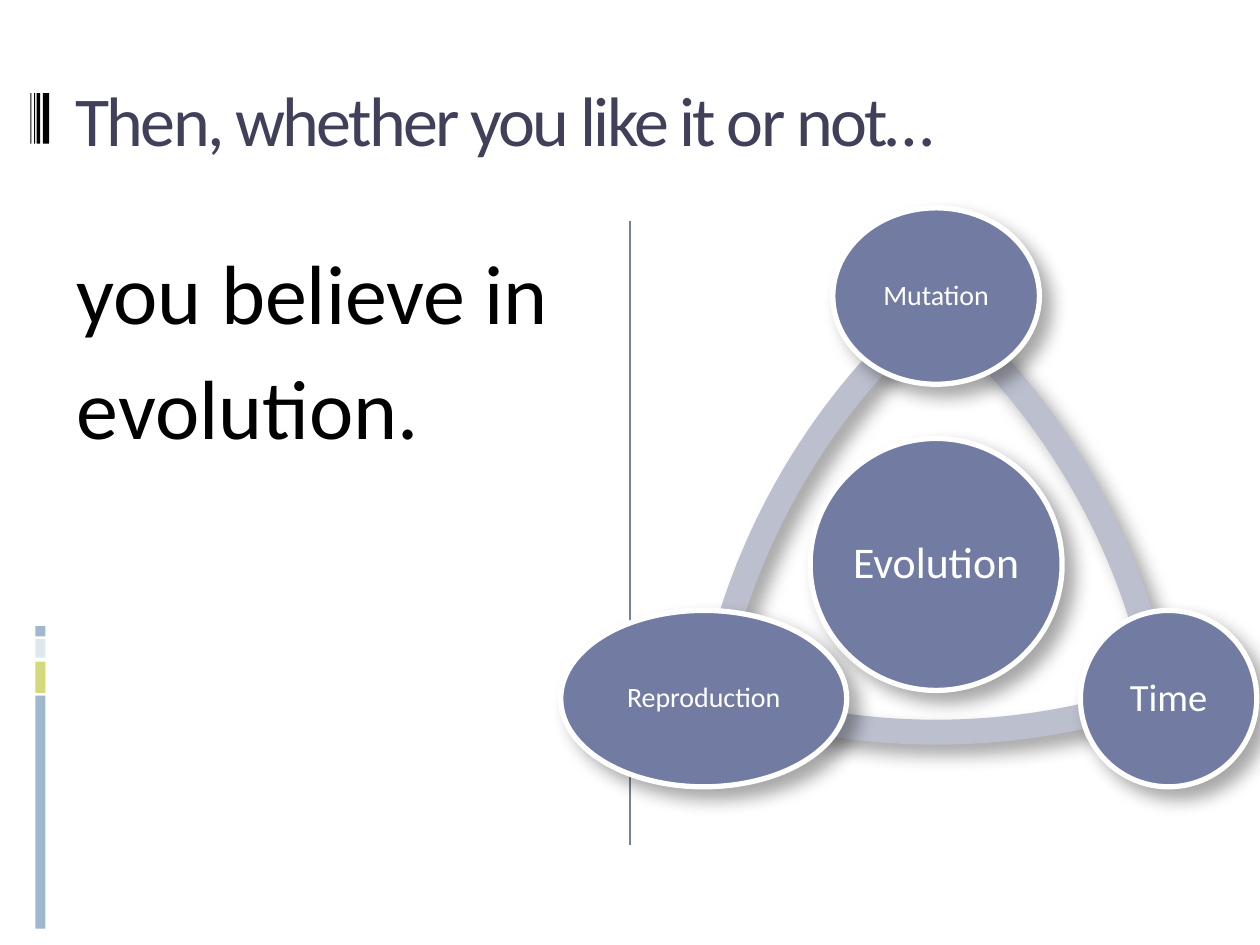
from dataclasses import dataclass
from math import cos, radians, sin

from lxml.etree import SubElement
from pptx import Presentation
from pptx.dml.color import RGBColor
from pptx.enum.shapes import MSO_CONNECTOR, MSO_SHAPE
from pptx.enum.text import MSO_ANCHOR, PP_ALIGN
from pptx.oxml.ns import qn
from pptx.util import Inches, Pt

COLORS = {
    "title": "40405A", "body": "000000", "white": "FFFFFF", "rule": "728697",
    "node": "727CA3", "arc": "BCBFCE", "black": "000000",
    "blue": "9FB8CD", "green": "D2DA7A", "pale": "DDE9EC",
}
CENTER_X, CENTER_Y = 7.43, 4.48
NODE_DISTANCE = 2.13
ARC_DISTANCE, ARC_SIZE = 4.06, 10.98
ARC_HALF_SPAN, ARC_THICKNESS = 19.77, 0.018
ARC_UNIT = 0.6  # adjustment value of one degree


@dataclass
class Bar:
    left: float
    top: float
    width: float
    height: float
    color: str


@dataclass
class Node:
    label: str
    width: float
    height: float
    size: int
    distance: float = NODE_DISTANCE
    angle: float = 0


BARS = [
    Bar(0.28, 5.52, 0.08, 1.85, "blue"),
    Bar(0.28, 5.25, 0.08, 0.25, "green"),
    Bar(0.28, 5.07, 0.08, 0.15, "pale"),
    Bar(0.28, 4.97, 0.08, 0.08, "blue"),
] + [Bar(left, 0.74, width, 0.4, "black")
     for left, width in [(0.34, 0.05), (0.29, 0.03), (0.27, 0.01), (0.24, 0.01)]]

NODES = [
    Node("Evolution", 2, 2, 25, distance=0),
    Node("Mutation", 1.64, 1.4, 16, angle=270),
    Node("Time", 1.4, 1.4, 22, angle=30),
    Node("Reproduction", 2.27, 1.4, 16, angle=150),
]
ARC_ANGLES = [210, 90, 330]


def rgb(name: str) -> RGBColor:
    return RGBColor.from_string(COLORS[name])


def polar(distance: float, angle: float) -> tuple[float, float]:
    return (CENTER_X + distance * cos(radians(angle)),
            CENTER_Y + distance * sin(radians(angle)))


def add_filled(page, kind, left, top, width, height, color: str):
    shape = page.shapes.add_shape(
        kind, Inches(left), Inches(top), Inches(width), Inches(height))
    shape.fill.solid()
    shape.fill.fore_color.rgb = rgb(color)
    shape.line.fill.background()
    shape.shadow.inherit = False
    return shape


def add_shadow(shape) -> None:
    effects = shape._element.spPr.find(qn("a:effectLst"))
    shadow = SubElement(effects, qn("a:outerShdw"), blurRad=str(Pt(10.2)),
                        dist=str(Pt(8)), dir="2700000", algn="tl", rotWithShape="0")
    color = SubElement(shadow, qn("a:srgbClr"), val=COLORS["black"])
    SubElement(color, qn("a:alpha"), val="35000")


def write(frame, text: str, size: int, color: str, spacing: int = 0, **formats) -> None:
    para = frame.paragraphs[0]
    for name, value in formats.items():
        setattr(para, name, value)
    span = para.add_run()
    span.text = text
    for name, value in {"name": "Calibri", "size": Pt(size)}.items():
        setattr(span.font, name, value)
    span.font.color.rgb = rgb(color)
    if spacing:
        span._r.get_or_add_rPr().set("spc", str(spacing))


def add_text(page, left, top, width, height, anchor):
    box = page.shapes.add_textbox(
        Inches(left), Inches(top), Inches(width), Inches(height))
    box.text_frame.word_wrap = True
    box.text_frame.vertical_anchor = anchor
    return box.text_frame


def add_arc(page, angle: float) -> None:
    # The arc bulges towards its angle, so its circle lies on the opposite side
    x, y = polar(ARC_DISTANCE, angle + 180)
    arc = add_filled(page, MSO_SHAPE.BLOCK_ARC, x - ARC_SIZE / 2, y - ARC_SIZE / 2,
                     ARC_SIZE, ARC_SIZE, "arc")
    arc.adjustments[0] = (angle - ARC_HALF_SPAN) * ARC_UNIT
    arc.adjustments[1] = (angle + ARC_HALF_SPAN) * ARC_UNIT
    arc.adjustments[2] = ARC_THICKNESS
    add_shadow(arc)


def add_node(page, node: Node) -> None:
    x, y = polar(node.distance, node.angle)
    oval = add_filled(page, MSO_SHAPE.OVAL, x - node.width / 2, y - node.height / 2,
                      node.width, node.height, "node")
    oval.line.color.rgb = rgb("white")
    oval.line.width = Pt(3)
    add_shadow(oval)
    frame = oval.text_frame
    for side in ("left", "top", "right", "bottom"):
        setattr(frame, f"margin_{side}", 0)
    frame.word_wrap = False
    frame.vertical_anchor = MSO_ANCHOR.MIDDLE
    write(frame, node.label, node.size, "white",
          alignment=PP_ALIGN.CENTER, line_spacing=0.9)


def main() -> None:
    deck = Presentation()
    deck.slide_width, deck.slide_height = Inches(10), Inches(7.5)
    page = deck.slides.add_slide(deck.slide_layouts[6])

    # Side decoration
    for bar in BARS:
        add_filled(page, MSO_SHAPE.RECTANGLE, bar.left, bar.top,
                   bar.width, bar.height, bar.color)

    # Column divider
    divider = page.shapes.add_connector(
        MSO_CONNECTOR.STRAIGHT, Inches(5), Inches(1.75), Inches(5), Inches(6.71))
    divider.line.color.rgb = rgb("rule")
    divider.line.width = Pt(0.75)
    SubElement(divider._element.spPr, qn("a:effectLst"))

    # Title and body
    write(add_text(page, 0.5, 0.23, 9, 1.42, MSO_ANCHOR.MIDDLE),
          "Then, whether you like it or not…", 40, "title", spacing=-150)
    write(add_text(page, 0.51, 1.75, 4.42, 4.95, MSO_ANCHOR.TOP),
          "you believe in evolution.", 48, "body",
          line_spacing=1.14, space_before=Pt(7))

    # Cycle diagram
    for angle in ARC_ANGLES:
        add_arc(page, angle)
    for node in NODES:
        add_node(page, node)

    deck.save("out.pptx")


if __name__ == "__main__":
    main()
